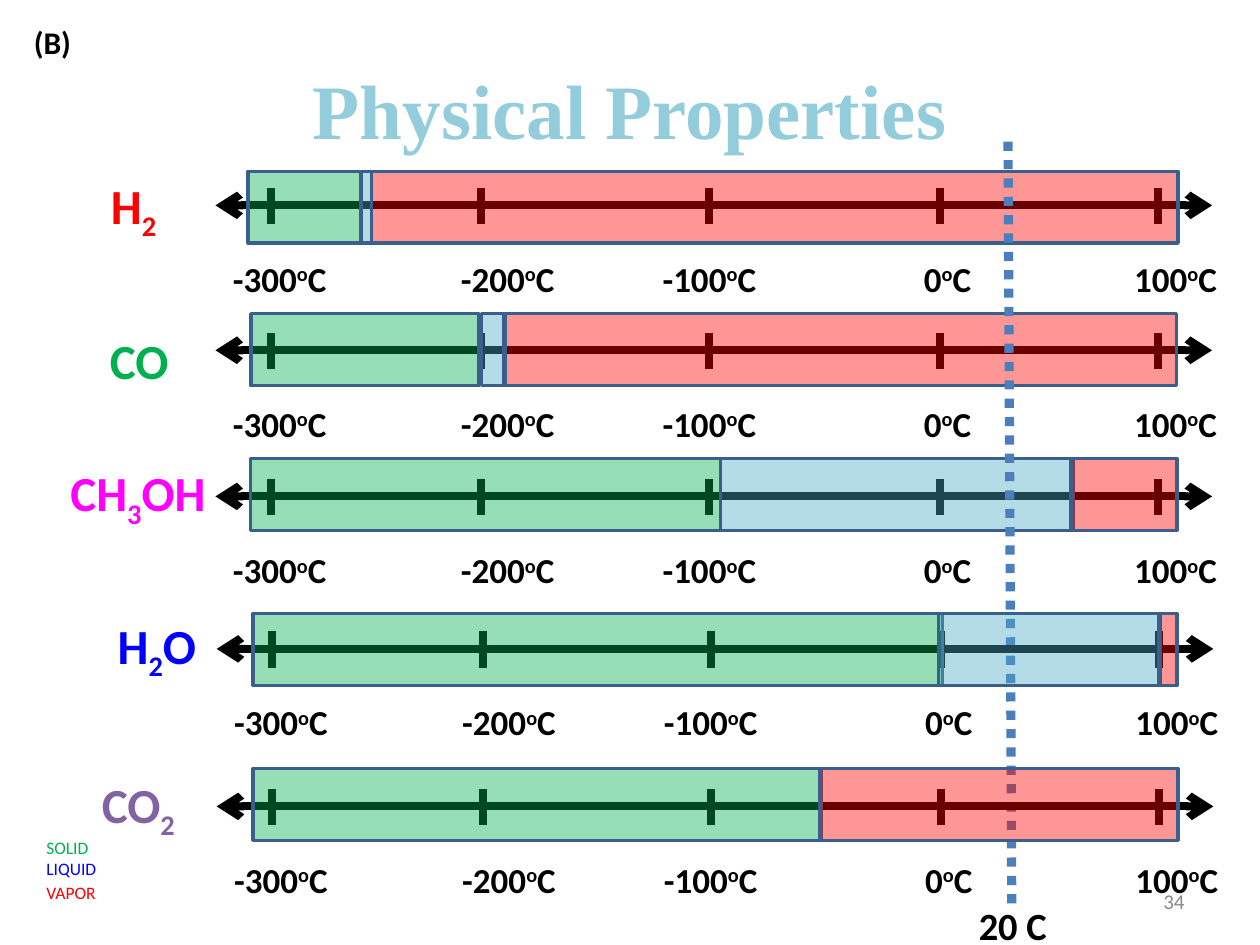
import pptx
import pptx.util
import pptx.dml.color
import pptx.enum.dml
import pptx.enum.shapes
import pptx.enum.text
import pptx.oxml
import pptx.oxml.ns
from lxml import etree

Inches = pptx.util.Inches
Pt = pptx.util.Pt
ALIGN = pptx.enum.text.PP_ALIGN
ANCHOR = pptx.enum.text.MSO_ANCHOR
qn = pptx.oxml.ns.qn

GREEN, AQUA, RED, BLUE, BLACK = "00B050", "4BACC6", "FF0000", "0000FF", "000000"
OUTLINE = "3A5F8C"


def color(value):
    return pptx.dml.color.RGBColor.from_string(value)


class SlideBuilder:
    font = "Calibri"
    bar_height = 0.57
    opacity = 41

    def __init__(self, slide):
        self.slide = slide

    def format_run(self, run, size, ink, bold, font=None):
        run.font.name = font or self.font
        run.font.size = Pt(size)
        run.font.bold = bold
        run.font.color.rgb = color(ink)

    def title(self, text, box, size, ink, font):
        title = self.slide.shapes.title
        title.left, title.top, title.width, title.height = map(Inches, box)
        title.text_frame.text = text
        title.text_frame.vertical_anchor = ANCHOR.MIDDLE
        paragraph = title.text_frame.paragraphs[0]
        paragraph.alignment = ALIGN.CENTER
        self.format_run(paragraph.runs[0], size, ink, True, font)

    def text(self, pieces, box, size, ink=BLACK, bold=True, align=ALIGN.LEFT,
             anchor=ANCHOR.MIDDLE, wrap=True, shapes=None):
        shape = (shapes or self.slide.shapes).add_textbox(*map(Inches, box))
        shape.text_frame.word_wrap = wrap
        shape.text_frame.vertical_anchor = anchor
        paragraph = shape.text_frame.paragraphs[0]
        paragraph.alignment = align
        for content, baseline in pieces:
            run = paragraph.add_run()
            run.text = content
            self.format_run(run, size, ink, bold)
            if baseline:
                run._r.get_or_add_rPr().set("baseline", str(baseline * 1000))

    def legend(self, entries, box, size):
        shape = self.slide.shapes.add_textbox(*map(Inches, box))
        frame = shape.text_frame
        frame.word_wrap = True
        frame.text = "\n".join(name for name, ink in entries)
        for paragraph, (name, ink) in zip(frame.paragraphs, entries):
            self.format_run(paragraph.runs[0], size, ink, False)
        frame.paragraphs[-1].space_before = Pt(size * 0.2)

    def line(self, start, end, ink, width, arrows=False, dash=None, shapes=None):
        connector = (shapes or self.slide.shapes).add_connector(
            pptx.enum.shapes.MSO_CONNECTOR.STRAIGHT, *map(Inches, start + end))
        connector.line.color.rgb = color(ink)
        connector.line.width = Pt(width)
        if dash:
            connector.line.dash_style = dash
        properties = connector._element.spPr
        if arrows:
            outline = properties.find(qn("a:ln"))
            for end_name in ("a:headEnd", "a:tailEnd"):
                etree.SubElement(outline, qn(end_name), type="arrow")
        etree.SubElement(properties, qn("a:effectLst"))

    def bar(self, left, top, width, fill):
        shape = self.slide.shapes.add_shape(
            pptx.enum.shapes.MSO_SHAPE.RECTANGLE,
            *map(Inches, (left, top, width, self.bar_height)))
        shape.shadow.inherit = False
        shape.fill.solid()
        shape.fill.fore_color.rgb = color(fill)
        fill_color = shape._element.spPr.find(qn("a:solidFill"))[0]
        etree.SubElement(fill_color, qn("a:alpha"), val=str(self.opacity * 1000))
        shape.line.color.rgb = color(OUTLINE)
        shape.line.width = Pt(2)

    def axis(self, left, middle):
        shapes = self.slide.shapes.add_group_shape().shapes
        self.line((left, middle), (left + 7.91, middle), BLACK, 4.5,
                  arrows=True, shapes=shapes)
        for degrees, tick, label in SCALE:
            x = left + tick
            self.line((x, middle - 0.14), (x, middle + 0.15), BLACK, 4.5, shapes=shapes)
            self.text([(str(degrees), 0), ("o", 30), ("C", 0)],
                      (left + label, middle + 0.31, 1.3, 0.54), 20,
                      align=ALIGN.CENTER, shapes=shapes)

    def substance(self, formula, ink, box, align, axis, bar_top, phases):
        self.axis(*axis)
        self.text(formula, box, 28, ink, align=align, wrap=box[2] > 0.6)
        for left, width, fill in phases:
            self.bar(left, bar_top, width, fill)


SCALE = [(-300, 0.44, -0.14), (-200, 2.11, 1.67), (-100, 3.92, 3.27),
         (0, 5.75, 5.16), (100, 7.48, 6.97)]

UPPER_SUBSTANCES = [
    ([("H", 0), ("2", -25)], RED, (0.77, 1.37, 0.58, 0.57), ALIGN.CENTER, (1.71, 1.63), 1.36,
     [(1.97, 0.89, GREEN), (2.87, 0.08, AQUA), (2.95, 6.4, RED)]),
    ([("CO", 0)], GREEN, (0.36, 2.55, 1.49, 0.62), ALIGN.CENTER, (1.71, 2.78), 2.49,
     [(1.99, 1.81, GREEN), (3.82, 0.18, AQUA), (4.01, 5.33, RED)]),
    ([("CH", 0), ("3", -25), ("OH", 0)], "FF00FF", (0.35, 3.63, 1.49, 0.62), ALIGN.CENTER,
     (1.71, 3.94), 3.64,
     [(1.99, 3.73, GREEN), (5.72, 2.8, AQUA), (8.5, 0.84, RED)]),
]
LOWER_SUBSTANCES = [
    ([("CO", 0), ("2", -25)], "8064A2", (0.71, 6.1, 1.06, 0.62), ALIGN.LEFT, (1.72, 6.4), 6.1,
     [(2.01, 4.51, GREEN), (6.51, 2.84, RED)]),
    ([("H", 0), ("2", -25), ("O", 0)], BLUE, (0.5, 4.84, 1.49, 0.62), ALIGN.CENTER,
     (1.72, 5.15), 4.87,
     [(2.01, 5.47, GREEN), (7.45, 1.76, AQUA), (9.2, 0.14, RED)]),
]


def main():
    presentation = pptx.Presentation()
    presentation.slide_width = Inches(10)
    presentation.slide_height = Inches(7.5)
    slide = presentation.slides.add_slide(presentation.slide_layouts[5])
    builder = SlideBuilder(slide)

    builder.title("Physical Properties", (0.5, 0.24, 9, 1.25), 44, "93CDDC", "Times New Roman")
    for substance in UPPER_SUBSTANCES:
        builder.substance(*substance)
    builder.line((8.03, 7.17), (8, 1.08), "4B7EBC", 5.25,
                 dash=pptx.enum.dml.MSO_LINE.ROUND_DOT)
    for substance in LOWER_SUBSTANCES:
        builder.substance(*substance)

    builder.text([("20 C", 0)], (7.67, 7.11, 1.17, 0.47), 22, anchor=ANCHOR.TOP)
    builder.legend([("SOLID", GREEN), ("LIQUID", BLUE), ("VAPOR", RED)],
                   (0.27, 6.59, 1.17, 0.64), 10)
    builder.text([("34", 0)], (7.17, 6.95, 2.33, 0.4), 12, "898989", bold=False,
                 align=ALIGN.RIGHT)
    builder.text([("(B)", 0)], (0.17, 0.13, 0.58, 0.4), 18, anchor=ANCHOR.TOP)
    presentation.save("out.pptx")


if __name__ == "__main__":
    main()
